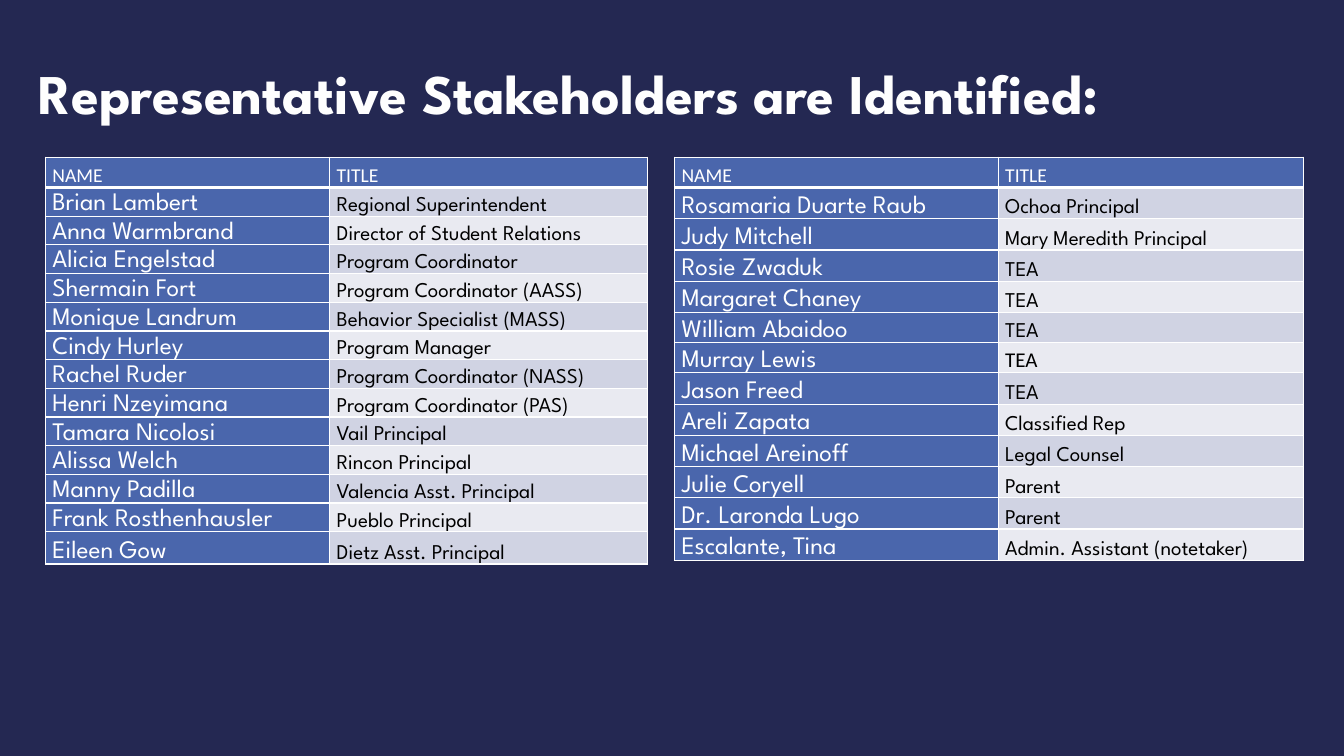
"""Build the slide that lists the representative stakeholders in two tables."""
from dataclasses import dataclass

import lxml.etree
import pptx
import pptx.dml.color
import pptx.enum.text
import pptx.oxml
import pptx.oxml.ns
import pptx.slide
import pptx.table
import pptx.text.text
import pptx.util

Inches = pptx.util.Inches
Pt = pptx.util.Pt
RGBColor = pptx.dml.color.RGBColor
qn = pptx.oxml.ns.qn

NAVY = RGBColor(0x24, 0x28, 0x52)
BLUE = RGBColor(0x4A, 0x66, 0xAC)
BAND_DARK = RGBColor(0xD0, 0xD3, 0xE3)
BAND_LIGHT = RGBColor(0xE9, 0xEA, 0xF1)
WHITE = RGBColor(0xFF, 0xFF, 0xFF)
TITLE_WHITE = RGBColor(0xFE, 0xFE, 0xFE)
BLACK = RGBColor(0x00, 0x00, 0x00)

SPARTAN = "League Spartan"
CALIBRI = "Calibri"
HEADER = ("NAME", "TITLE")

TITLE_SHADOW = (
    '<a:effectLst xmlns:a="http://schemas.openxmlformats.org/drawingml/2006/main">'
    '<a:outerShdw blurRad="38100" dist="38100" dir="2700000" algn="tl">'
    '<a:srgbClr val="000000"><a:alpha val="60000"/></a:srgbClr>'
    "</a:outerShdw></a:effectLst>"
)


@dataclass(frozen=True)
class Person:
    name: str
    title: str
    title_font: str = SPARTAN


@dataclass(frozen=True)
class Roster:
    left: float
    top: float
    col_widths: tuple[float, float]
    row_heights: tuple[float, ...]
    people: tuple[Person, ...]


@dataclass(frozen=True)
class CellStyle:
    fill: RGBColor
    color: RGBColor
    size: float
    font: str = SPARTAN
    bottom_border: float = 1


HEADER_STYLE = CellStyle(BLUE, WHITE, 14, CALIBRI, 3)
NAME_STYLE = CellStyle(BLUE, WHITE, 18)

ROSTERS = (
    Roster(0.45, 1.56, (2.82, 3.15), (0.3,) + (3.42 / 12,) * 12 + (0.32,), (
        Person("Brian Lambert", "Regional Superintendent"),
        Person("Anna Warmbrand", "Director of Student Relations"),
        Person("Alicia Engelstad", "Program Coordinator"),
        Person("Shermain Fort", "Program Coordinator (AASS)"),
        Person("Monique Landrum", "Behavior Specialist (MASS)"),
        Person("Cindy Hurley", "Program Manager"),
        Person("Rachel Ruder", "Program Coordinator (NASS)"),
        Person("Henri Nzeyimana", "Program Coordinator (PAS)"),
        Person("Tamara Nicolosi", "Vail Principal"),
        Person("Alissa Welch", "Rincon Principal"),
        Person("Manny Padilla", "Valencia Asst. Principal"),
        Person("Frank Rosthenhausler", "Pueblo Principal"),
        Person("Eileen Gow", "Dietz Asst. Principal"),
    )),
    Roster(6.69, 1.56, (3.21, 3.03), (0.3,) + (0.31,) * 4 + (0.3,) * 2 + (0.31,) * 6, (
        Person("Rosamaria Duarte Raub", "Ochoa Principal"),
        Person("Judy Mitchell", "Mary Meredith Principal"),
        Person("Rosie Zwaduk", "TEA"),
        Person("Margaret Chaney", "TEA"),
        Person("William Abaidoo", "TEA"),
        Person("Murray Lewis", "TEA", CALIBRI),
        Person("Jason Freed", "TEA"),
        Person("Areli Zapata", "Classified Rep"),
        Person("Michael Areinoff", "Legal Counsel"),
        Person("Julie Coryell", "Parent"),
        Person("Dr. Laronda Lugo", "Parent"),
        Person("Escalante, Tina", "Admin. Assistant (notetaker)"),
    )),
)


def set_font(p: pptx.text.text._Paragraph, font: str, size: float, color: RGBColor, bold: bool) -> None:
    p.font.name = font
    p.font.size = Pt(size)
    p.font.bold = bold
    p.font.color.rgb = color


def set_borders(cell: pptx.table._Cell, bottom: float) -> None:
    tc_pr = cell._tc.get_or_add_tcPr()
    widths = {"a:lnL": 1, "a:lnR": 1, "a:lnT": 1, "a:lnB": bottom}
    for i, (tag, width) in enumerate(widths.items()):
        ln = lxml.etree.Element(qn(tag), w=str(Pt(width)))
        fill = lxml.etree.SubElement(ln, qn("a:solidFill"))
        lxml.etree.SubElement(fill, qn("a:srgbClr"), val=str(WHITE))
        tc_pr.insert(i, ln)


def fill_cell(cell: pptx.table._Cell, text: str, style: CellStyle) -> None:
    cell.text = text
    cell.vertical_anchor = pptx.enum.text.MSO_ANCHOR.BOTTOM
    cell.margin_left = cell.margin_right = Inches(0.07)
    cell.margin_top = cell.margin_bottom = 0
    cell.fill.solid()
    cell.fill.fore_color.rgb = style.fill
    p = cell.text_frame.paragraphs[0]
    p.line_spacing = 1.07
    set_font(p, style.font, style.size, style.color, False)
    set_borders(cell, style.bottom_border)


def add_roster(slide: pptx.slide.Slide, roster: Roster) -> None:
    sp = slide.shapes.add_table(
        len(roster.row_heights), len(roster.col_widths),
        Inches(roster.left), Inches(roster.top),
        Inches(sum(roster.col_widths)), Inches(sum(roster.row_heights)),
    )
    table = sp.table
    table.first_row = table.horz_banding = False
    for column, width in zip(table.columns, roster.col_widths):
        column.width = Inches(width)
    for row, height in zip(table.rows, roster.row_heights):
        row.height = Inches(height)
    for col, label in enumerate(HEADER):
        fill_cell(table.cell(0, col), label, HEADER_STYLE)
    for row, person in enumerate(roster.people, start=1):
        band = BAND_DARK if row % 2 else BAND_LIGHT
        fill_cell(table.cell(row, 0), person.name, NAME_STYLE)
        fill_cell(table.cell(row, 1), person.title, CellStyle(band, BLACK, 15, person.title_font))


def add_title(slide: pptx.slide.Slide, text: str) -> None:
    sp = slide.shapes.title
    sp.left, sp.top, sp.width, sp.height = map(Inches, (0.28, 0.24, 12.66, 1.06))
    tf = sp.text_frame
    tf.vertical_anchor = pptx.enum.text.MSO_ANCHOR.BOTTOM
    p = tf.paragraphs[0]
    p.alignment = pptx.enum.text.PP_ALIGN.LEFT
    r = p.add_run()
    r.text = text
    set_font(p, SPARTAN, 40, TITLE_WHITE, True)
    r._r.get_or_add_rPr().append(pptx.oxml.parse_xml(TITLE_SHADOW))


def main() -> None:
    prs = pptx.Presentation()
    prs.slide_width, prs.slide_height = Inches(13.33), Inches(7.5)
    slide = prs.slides.add_slide(prs.slide_layouts.get_by_name("Title Only"))
    slide.background.fill.solid()
    slide.background.fill.fore_color.rgb = NAVY
    add_title(slide, "Representative Stakeholders are Identified:")
    for roster in ROSTERS:
        add_roster(slide, roster)
    prs.save("out.pptx")


if __name__ == "__main__":
    main()
